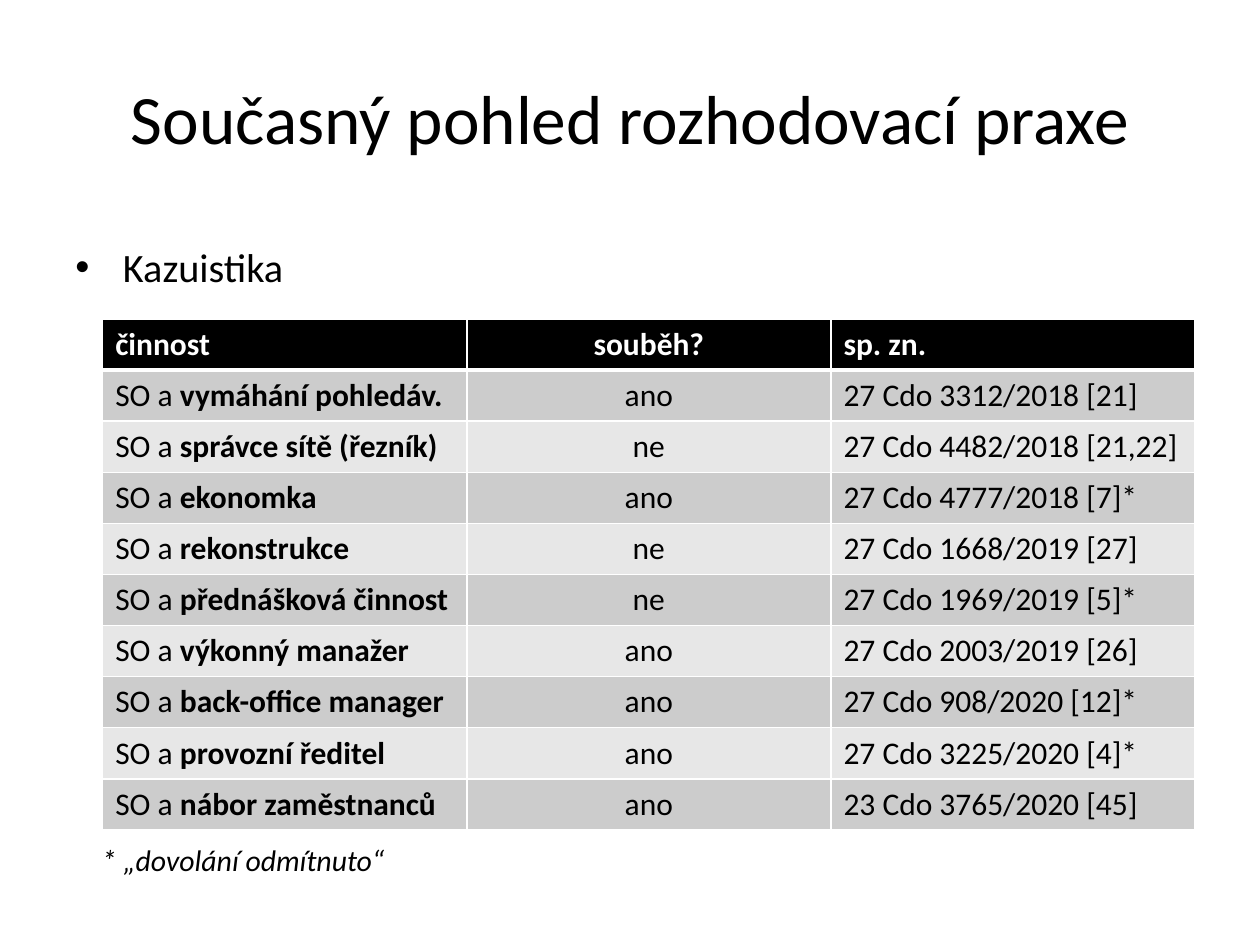
from lxml import etree
from pptx import Presentation
from pptx import util as u
from pptx.dml.color import RGBColor
from pptx.enum import text
from pptx.oxml import ns

FONT = "Calibri"
BLACK, WHITE, DARK_BAND, LIGHT_BAND = "000000", "FFFFFF", "CCCCCC", "E7E7E7"


def style(font, size, colour=BLACK):
    font.name = FONT
    font.size = u.Pt(size)
    font.color.rgb = RGBColor.from_string(colour)


def add_border(cell, side, width):
    """Add a white border; call before the cell gets its fill."""
    line = etree.SubElement(cell._tc.get_or_add_tcPr(), ns.qn(f"a:ln{side}"), w=str(u.Pt(width)))
    fill = etree.SubElement(line, ns.qn("a:solidFill"))
    etree.SubElement(fill, ns.qn("a:srgbClr"), val=WHITE)


HEADINGS = ["činnost", "souběh?", "sp. zn."]
CASES = [
    ("vymáhání pohledáv.", "ano", "27 Cdo 3312/2018 [21]"),
    ("správce sítě (řezník)", "ne", "27 Cdo 4482/2018 [21,22]"),
    ("ekonomka", "ano", "27 Cdo 4777/2018 [7]*"),
    ("rekonstrukce", "ne", "27 Cdo 1668/2019 [27]"),
    ("přednášková činnost", "ne", "27 Cdo 1969/2019 [5]*"),
    ("výkonný manažer", "ano", "27 Cdo 2003/2019 [26]"),
    ("back-office manager", "ano", "27 Cdo 908/2020 [12]*"),
    ("provozní ředitel", "ano", "27 Cdo 3225/2020 [4]*"),
    ("nábor zaměstnanců", "ano", "23 Cdo 3765/2020 [45]"),
]

deck = Presentation()
deck.slide_width, deck.slide_height = u.Cm(25.4), u.Cm(19.05)
slide = deck.slides.add_slide(deck.slide_layouts[5])

# Title
title = slide.shapes.title
title.left, title.top = u.Cm(1.27), u.Cm(0.76)
title.width, title.height = u.Cm(22.86), u.Cm(3.18)
title.text_frame.text = "Současný pohled rozhodovací praxe"
title.text_frame.vertical_anchor = text.MSO_ANCHOR.MIDDLE
heading = title.text_frame.paragraphs[0]
heading.alignment = text.PP_ALIGN.CENTER
style(heading.font, 39.6)

# Bullet above the table and footnote below it
notes = []
for words, left, top, size in [
    ("Kazuistika", 1.27, 4.76, 23),
    ("* „dovolání odmítnuto“", 1.8, 16.84, 17),
]:
    box = slide.shapes.add_textbox(u.Cm(left), u.Cm(top), u.Cm(22), u.Cm(1.2))
    box.text_frame.word_wrap = True
    note = box.text_frame.paragraphs[0]
    note.text = words
    style(note.font, size)
    notes.append(note)

topic, footnote = notes
footnote.font.italic = True
indent = u.Cm(0.96)
bullet = topic._p.get_or_add_pPr()
bullet.set("marL", str(indent))
bullet.set("indent", str(-indent))
bullet.insert(0, etree.Element(ns.qn("a:buFont"), typeface="Arial"))
bullet.insert(1, etree.Element(ns.qn("a:buChar"), char="•"))

# Table of cases
row_count, column_count = len(CASES) + 1, len(HEADINGS)
table = slide.shapes.add_table(
    row_count, column_count, u.Cm(2.07), u.Cm(6.43), u.Cm(22.02), u.Cm(10.3)
).table

for r, values in enumerate([HEADINGS, *CASES]):
    is_header = r == 0
    band = BLACK if is_header else DARK_BAND if r % 2 else LIGHT_BAND
    for c, value in enumerate(values):
        cell = table.cell(r, c)
        for side in "LRTB":
            under_header = (r, side) in [(0, "B"), (1, "T")]
            add_border(cell, side, 3 if under_header else 1)
        cell.fill.solid()
        cell.fill.fore_color.rgb = RGBColor.from_string(band)

        entry = cell.text_frame.paragraphs[0]
        style(entry.font, 18, WHITE if is_header else BLACK)
        entry.font.bold = is_header
        if c == 1:
            entry.alignment = text.PP_ALIGN.CENTER
        if c == 0 and not is_header:
            entry.add_run().text = "SO a "
            activity = entry.add_run()
            activity.text = value
            activity.font.bold = True
        else:
            entry.add_run().text = value

deck.save("out.pptx")
